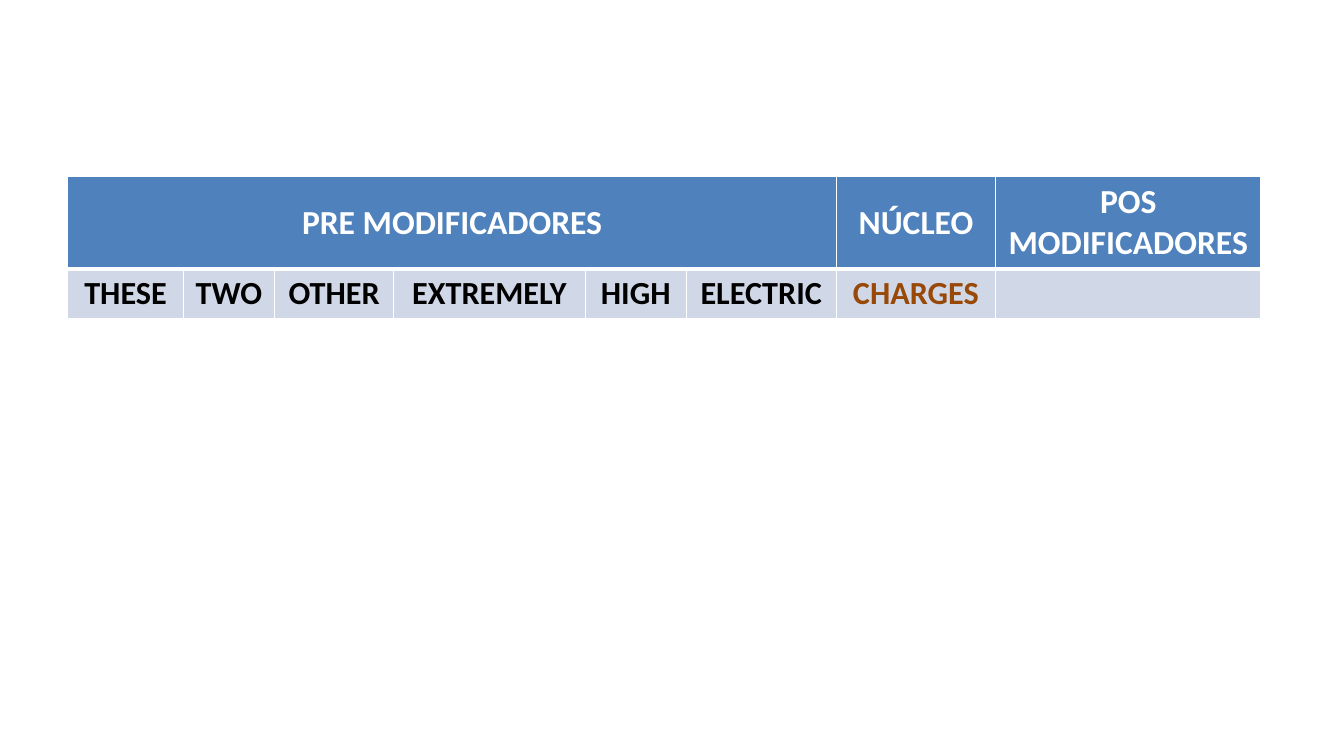
from lxml.etree import SubElement
from pptx import Presentation
from pptx.dml.color import RGBColor
from pptx.enum.text import MSO_ANCHOR as Anchor, PP_ALIGN as Align
from pptx.oxml.ns import qn
from pptx.util import Pt

WIDTH, HEIGHT = 960, 540
LEFT, TOP = 48.5, 126.25
COLUMNS = [82.5, 65.25, 85, 137, 72, 107.25, 113.75, 189.5]
PRE_COUNT = 6
HEADINGS = {0: "PRE MODIFICADORES", PRE_COUNT: "NÚCLEO", PRE_COUNT + 1: "POS MODIFICADORES"}
WORDS = ["THESE", "TWO", "OTHER", "EXTREMELY", "HIGH", "ELECTRIC", "CHARGES", ""]
ROWS = [
    dict(height=65.5, size=24, color="FFFFFF", fill="4F81BD",
         borders=dict(lnL=1, lnR=1, lnT=1, lnB=3)),
    dict(height=35.25, size=23, color="000000", fill="D0D8E8",
         borders=dict(lnL=1, lnR=1, lnT=3, lnB=1)),
]
NUCLEUS_COLOR = "984807"


def rgb(value):
    return RGBColor.from_string(value)


def write(cell, text, size, color, font="Calibri", bold=True):
    cell.vertical_anchor = Anchor.MIDDLE
    paragraph = cell.text_frame.paragraphs[0]
    paragraph.alignment = Align.CENTER
    if text:
        run = paragraph.add_run()
        run.text = text
        run.font.name = font
        run.font.size = Pt(size)
        run.font.bold = bold
        run.font.color.rgb = rgb(color)


def format_cell(cell, fill, borders):
    properties = cell._tc.get_or_add_tcPr()
    for side, width in borders.items():
        line = SubElement(properties, qn(f"a:{side}"), w=str(Pt(width)))
        solid = SubElement(line, qn("a:solidFill"))
        SubElement(solid, qn("a:srgbClr"), val="FFFFFF")
    cell.fill.solid()
    cell.fill.fore_color.rgb = rgb(fill)


def main():
    presentation = Presentation()
    presentation.slide_width, presentation.slide_height = Pt(WIDTH), Pt(HEIGHT)
    slide = presentation.slides.add_slide(presentation.slide_layouts[6])
    table_height = sum(row["height"] for row in ROWS)
    table = slide.shapes.add_table(
        len(ROWS), len(COLUMNS), Pt(LEFT), Pt(TOP), Pt(sum(COLUMNS)), Pt(table_height)
    ).table
    for column, width in zip(table.columns, COLUMNS):
        column.width = Pt(width)
    for index, row in enumerate(ROWS):
        table.rows[index].height = Pt(row["height"])
        for position in range(len(COLUMNS)):
            format_cell(table.cell(index, position), row["fill"], row["borders"])
    table.cell(0, 0).merge(table.cell(0, PRE_COUNT - 1))

    heading_row, word_row = ROWS
    for position, heading in HEADINGS.items():
        write(table.cell(0, position), heading,
              size=heading_row["size"], color=heading_row["color"])
    for position, word in enumerate(WORDS):
        color = NUCLEUS_COLOR if position == PRE_COUNT else word_row["color"]
        write(table.cell(1, position), word, size=word_row["size"], color=color)
    presentation.save("out.pptx")


if __name__ == "__main__":
    main()
